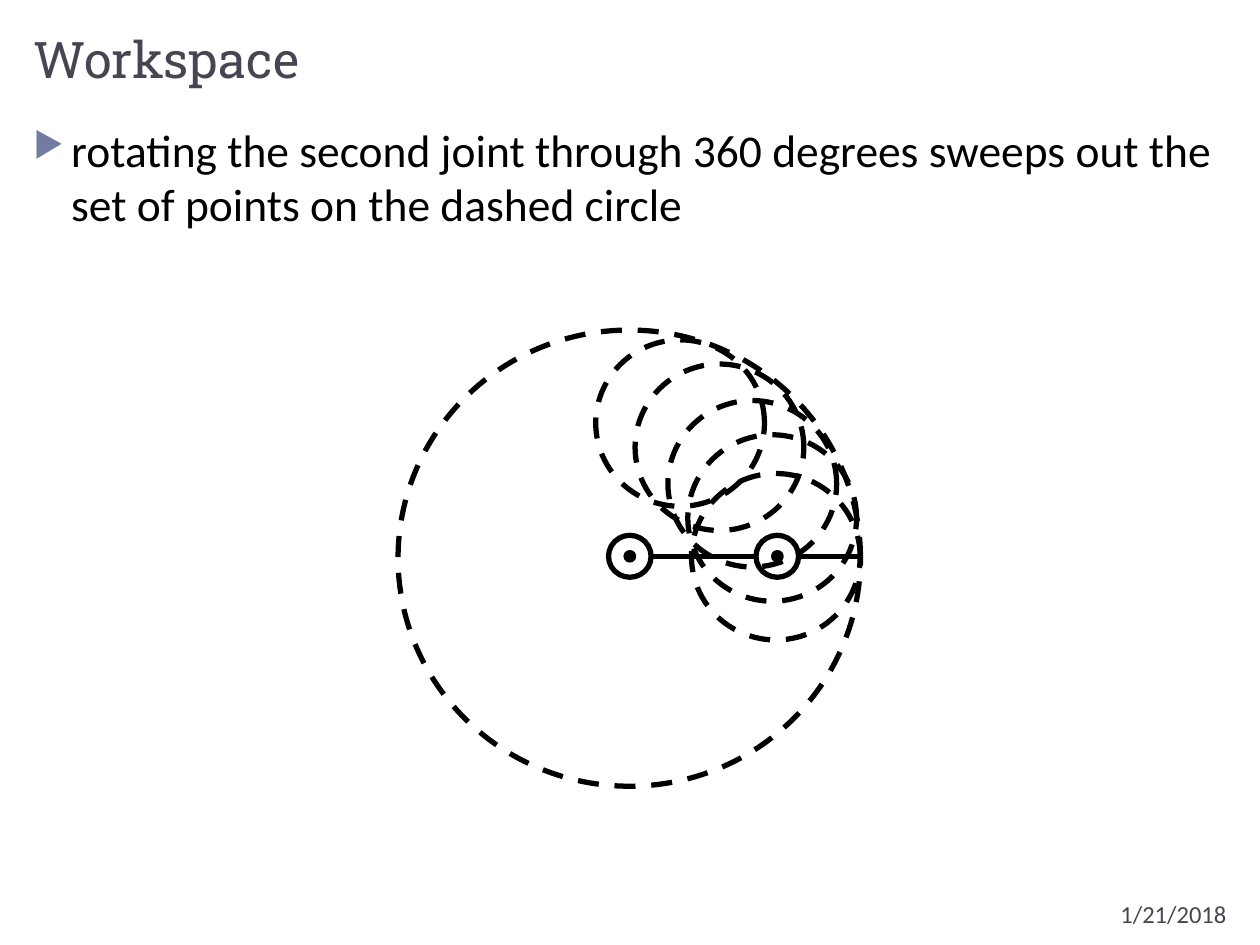
from dataclasses import dataclass

from lxml import etree
from pptx import Presentation
from pptx.dml.color import RGBColor
from pptx.enum import dml, shapes, text
from pptx.oxml import ns
from pptx.util import Emu, Inches, Pt


@dataclass(frozen=True)
class Theme:
    ink: str = "000000"
    heading: str = "464653"
    accent: str = "727CA3"
    paper: str = "FFFFFF"
    title_font: str = "Roboto Slab"
    body_font: str = "Calibri"
    title_size: float = 28.8
    body_size: float = 26
    date_size: float = 14
    stroke: float = 3
    pivot_stroke: float = 1.5


THEME = Theme()
WIDTH, HEIGHT = Inches(10), Inches(7.5)

# Regions as left, top, width, height in percent of the slide
TITLE_BOX = (1.67, 2.22, 96.67, 7.78)
BODY_BOX = (1.67, 12.22, 96.67, 80)
DATE_BOX = (80, 94.44, 18.33, 3.6)
REACH_BOX = (31.6, 34.93, 36.7, 48.27)

# Centres in percent of the reach box
SHOULDER, ELBOW, TIP = (50.1, 49.6), (82, 49.6), (100, 49.6)
REACH_CENTRE = (50, 50)
SWEEP_CENTRES = [(81.7, 49.7), (80.9, 41.2), (76.6, 33.7), (69.5, 25.7), (61, 20.4)]
# Diameters in percent of the reach box
JOINT, PIVOT, SWEEP, REACH = 9.2, 2.2, 36.5, 100


def region(percents):
    sides = (WIDTH, HEIGHT, WIDTH, HEIGHT)
    return [Emu(round(side * share / 100)) for side, share in zip(sides, percents)]


def write(paragraph, words, font, size, color, align=text.PP_ALIGN.LEFT):
    paragraph.text = words
    paragraph.alignment = align
    formats = {"name": font, "size": Pt(size), "bold": False}
    for key, value in formats.items():
        setattr(paragraph.font, key, value)
    paragraph.font.color.rgb = RGBColor.from_string(color)


def add_text_frame(slide, box):
    frame = slide.shapes.add_textbox(*box).text_frame
    frame.word_wrap = True
    return frame


def add_title(slide, box):
    title = slide.shapes.title
    for key, value in zip(("left", "top", "width", "height"), box):
        setattr(title, key, value)
    title.text_frame.auto_size = text.MSO_AUTO_SIZE.NONE
    title.text_frame.vertical_anchor = text.MSO_ANCHOR.BOTTOM
    write(title.text_frame.paragraphs[0], "Workspace",
          THEME.title_font, THEME.title_size, THEME.heading)


def add_body(slide, box):
    statement = add_text_frame(slide, box).paragraphs[0]
    # Triangle bullet with a hanging indent
    properties = statement._p.get_or_add_pPr()
    properties.set("marL", str(Inches(0.3)))
    properties.set("indent", str(-Inches(0.3)))
    bullet_color = etree.SubElement(properties, ns.qn("a:buClr"))
    etree.SubElement(bullet_color, ns.qn("a:srgbClr"), val=THEME.accent)
    etree.SubElement(properties, ns.qn("a:buSzPct"), val="76000")
    etree.SubElement(properties, ns.qn("a:buChar"), char="▶")
    write(statement, "rotating the second joint through 360 degrees sweeps out "
          "the set of points on the dashed circle",
          THEME.body_font, THEME.body_size, THEME.ink)


def add_date(slide, box):
    write(add_text_frame(slide, box).paragraphs[0], "1/21/2018", THEME.body_font,
          THEME.date_size, THEME.heading, text.PP_ALIGN.RIGHT)


def add_workspace(slide, box):
    left, top, width, height = box
    ink = RGBColor.from_string(THEME.ink)

    def locate(point):
        return (Emu(round(left + width * point[0] / 100)),
                Emu(round(top + height * point[1] / 100)))

    def add_link(start, end):
        link = slide.shapes.add_connector(
            shapes.MSO_CONNECTOR.STRAIGHT, *locate(start), *locate(end))
        link.line.color.rgb = ink
        link.line.width = Pt(THEME.stroke)
        etree.SubElement(link._element.spPr, ns.qn("a:effectLst"))

    def add_circle(centre, diameter, fill=None, stroke=THEME.stroke):
        corner = [middle - diameter / 2 for middle in centre]
        circle = slide.shapes.add_shape(
            shapes.MSO_SHAPE.OVAL, *locate(corner),
            Emu(round(width * diameter / 100)), Emu(round(height * diameter / 100)))
        circle.shadow.inherit = False
        circle.line.color.rgb = ink
        circle.line.width = Pt(stroke)
        if fill:
            circle.fill.solid()
            circle.fill.fore_color.rgb = RGBColor.from_string(fill)
        else:
            # Swept paths are open, dashed and start at the right
            circle.fill.background()
            circle.line.dash_style = dml.MSO_LINE.DASH
            circle._element.spPr.xfrm.set("flipH", "1")

    # Arm links
    add_link(ELBOW, SHOULDER)
    add_link(TIP, ELBOW)
    # Joints, then their pivots
    for joint in (ELBOW, SHOULDER):
        add_circle(joint, JOINT, THEME.paper)
    for joint in (SHOULDER, ELBOW):
        add_circle(joint, PIVOT, THEME.ink, THEME.pivot_stroke)
    # Sweep of the second joint at each elbow place, and the outer reach
    first, *others = SWEEP_CENTRES
    add_circle(first, SWEEP)
    add_circle(REACH_CENTRE, REACH)
    for centre in others:
        add_circle(centre, SWEEP)


def main():
    deck = Presentation()
    deck.slide_width, deck.slide_height = WIDTH, HEIGHT
    slide = deck.slides.add_slide(deck.slide_layouts[5])
    add_title(slide, region(TITLE_BOX))
    add_date(slide, region(DATE_BOX))
    add_body(slide, region(BODY_BOX))
    add_workspace(slide, region(REACH_BOX))
    deck.save("out.pptx")


if __name__ == "__main__":
    main()
